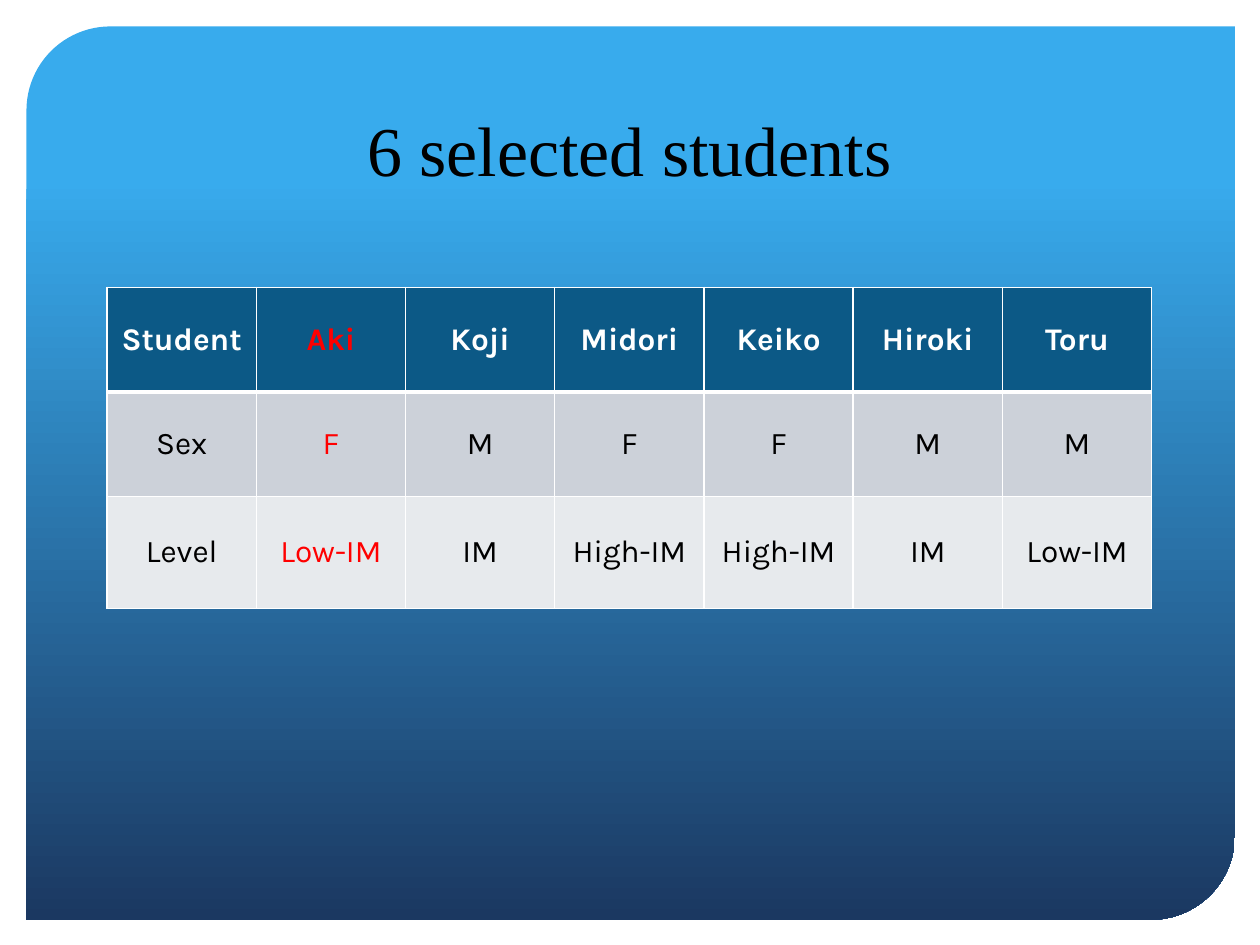
from dataclasses import dataclass

from lxml import etree
from pptx import Presentation
from pptx.dml.color import RGBColor
from pptx.enum.shapes import MSO_SHAPE
from pptx.enum.text import MSO_ANCHOR, PP_ALIGN
from pptx.oxml.ns import qn
from pptx.util import Inches, Pt

CENTER = PP_ALIGN.CENTER
MIDDLE = MSO_ANCHOR.MIDDLE
BOTTOM = MSO_ANCHOR.BOTTOM
PANEL_SHAPE = MSO_SHAPE.ROUND_2_DIAG_RECTANGLE

WHITE = RGBColor(0xFF, 0xFF, 0xFF)
BLACK = RGBColor(0x00, 0x00, 0x00)
RED = RGBColor(0xFF, 0x00, 0x00)
SKY = RGBColor(0x38, 0xAB, 0xED)
NAVY = RGBColor(0x1B, 0x38, 0x61)
HEADER_BLUE = RGBColor(0x0C, 0x59, 0x86)
BAND_DARK = RGBColor(0xCC, 0xD1, 0xD9)
BAND_LIGHT = RGBColor(0xE7, 0xEA, 0xED)

LEFT, WIDTH = Inches(0.85), Inches(8.29)
TABLE_TOP = Inches(2.28)
HIGHLIGHT_COLUMN = 1
THIN, THICK = 1, 3


@dataclass
class Row:
    texts: list[str]
    height: float
    fill: RGBColor
    color: RGBColor
    bold: bool = False
    top: float = THIN
    bottom: float = THIN


ROWS = [
    Row(["Student", "Aki", "Koji", "Midori", "Keiko", "Hiroki", "Toru"],
        0.83, HEADER_BLUE, WHITE, bold=True, bottom=THICK),
    Row(["Sex", "F", "M", "F", "F", "M", "M"],
        0.83, BAND_DARK, BLACK, top=THICK),
    Row(["Level", "Low-IM", "IM", "High-IM", "High-IM", "IM", "Low-IM"],
        0.89, BAND_LIGHT, BLACK),
]


def add_run(p, text: str, font: str, size: float, color: RGBColor,
            bold: bool = False) -> None:
    p.alignment = CENTER
    r = p.add_run()
    r.text = text
    r.font.name = font
    r.font.size = Pt(size)
    r.font.bold = bold
    r.font.color.rgb = color


def add_panel(s):
    panel = s.shapes.add_shape(PANEL_SHAPE, Inches(0.21), Inches(0.21),
                               Inches(9.59), Inches(7.09))
    panel.adjustments[0] = 0.094
    panel.adjustments[1] = 0
    panel.shadow.inherit = False
    panel.line.fill.background()
    panel.fill.gradient()
    panel.fill.gradient_angle = 270
    stops = zip(panel.fill.gradient_stops, ((0.17, SKY), (1, NAVY)))
    for stop, (position, color) in stops:
        stop.position = position
        stop.color.rgb = color
    return panel


def format_title(title, text: str) -> None:
    title.left, title.top = LEFT, Inches(0.42)
    title.width, title.height = WIDTH, Inches(1.14)
    tf = title.text_frame
    tf.vertical_anchor = BOTTOM
    add_run(tf.paragraphs[0], text, "Times New Roman", 40, BLACK)


def set_borders(cell, widths: dict[str, float]) -> None:
    props = cell._tc.get_or_add_tcPr()
    for side, width in widths.items():
        line = etree.SubElement(props, qn(f"a:ln{side}"), w=str(Pt(width)))
        fill = etree.SubElement(line, qn("a:solidFill"))
        etree.SubElement(fill, qn("a:srgbClr"), val=str(WHITE))


def add_student_table(s, rows: list[Row]) -> None:
    columns = len(rows[0].texts)
    height = Inches(sum(row.height for row in rows))
    table = s.shapes.add_table(len(rows), columns, LEFT, TABLE_TOP,
                               WIDTH, height).table
    for i, row in enumerate(rows):
        table.rows[i].height = Inches(row.height)
        for j, text in enumerate(row.texts):
            cell = table.cell(i, j)
            set_borders(cell, {"L": THIN, "R": THIN,
                               "T": row.top, "B": row.bottom})
            cell.fill.solid()
            cell.fill.fore_color.rgb = row.fill
            cell.vertical_anchor = MIDDLE
            color = RED if j == HIGHLIGHT_COLUMN else row.color
            add_run(cell.text_frame.paragraphs[0], text, "Karla", 18,
                    color, row.bold)


def main() -> None:
    prs = Presentation()
    prs.slide_width, prs.slide_height = Inches(10), Inches(7.5)
    s = prs.slides.add_slide(prs.slide_layouts[5])
    title = s.shapes.title
    panel = add_panel(s)
    title._element.addprevious(panel._element)
    format_title(title, "6 selected students")
    add_student_table(s, ROWS)
    prs.save("out.pptx")


if __name__ == "__main__":
    main()
